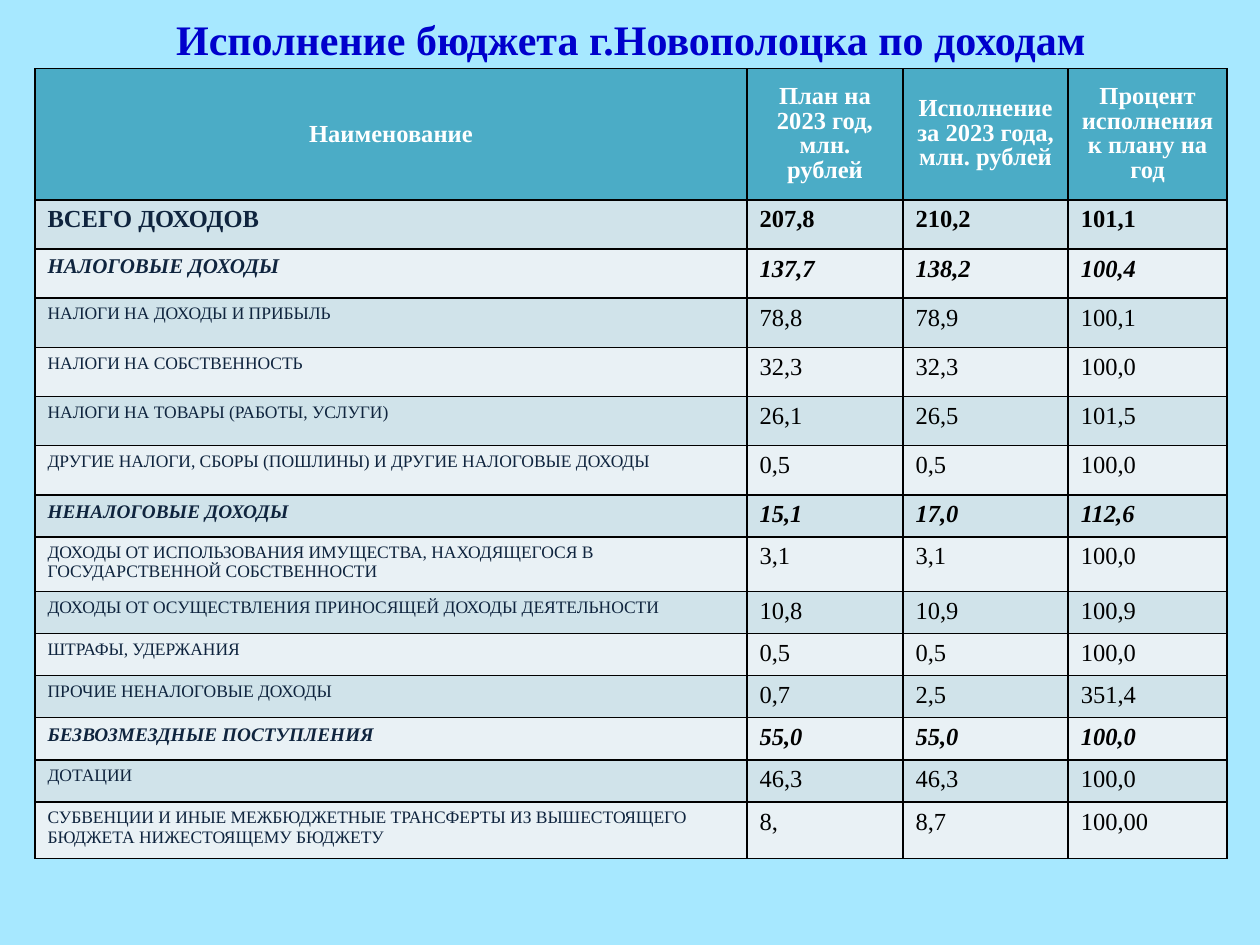
from lxml import etree
from pptx import Presentation
from pptx.dml.color import RGBColor
from pptx.enum import text
from pptx.oxml import ns
from pptx.util import Pt

FONT = "Times New Roman"
TITLE = "Исполнение бюджета г.Новополоцка по доходам"
HEADERS = [
    "Наименование",
    "План на 2023 год, млн. рублей",
    "Исполнение за 2023 года, млн. рублей",
    "Процент исполнения к плану на год",
]
STYLES = {
    "total": (14, True, False),
    "tax": (12, True, True),
    "group": (11, True, True),
    "item": (10, False, False),
}
ROWS = [
    ("total", 28.1, "ВСЕГО ДОХОДОВ", "207,8", "210,2", "101,1"),
    ("tax", 28.1, "НАЛОГОВЫЕ ДОХОДЫ", "137,7", "138,2", "100,4"),
    ("item", 28.1, "НАЛОГИ НА ДОХОДЫ И ПРИБЫЛЬ", "78,8", "78,9", "100,1"),
    ("item", 28.1, "НАЛОГИ НА СОБСТВЕННОСТЬ", "32,3", "32,3", "100,0"),
    ("item", 28.1, "НАЛОГИ НА ТОВАРЫ (РАБОТЫ, УСЛУГИ)", "26,1", "26,5", "101,5"),
    ("item", 28.1, "ДРУГИЕ НАЛОГИ, СБОРЫ (ПОШЛИНЫ) И ДРУГИЕ НАЛОГОВЫЕ ДОХОДЫ",
     "0,5", "0,5", "100,0"),
    ("group", 23.3, "НЕНАЛОГОВЫЕ ДОХОДЫ", "15,1", "17,0", "112,6"),
    ("item", 30.3, "ДОХОДЫ ОТ ИСПОЛЬЗОВАНИЯ ИМУЩЕСТВА, НАХОДЯЩЕГОСЯ В ГОСУДАРСТВЕННОЙ СОБСТВЕННОСТИ",
     "3,1", "3,1", "100,0"),
    ("item", 23.3, "ДОХОДЫ ОТ ОСУЩЕСТВЛЕНИЯ ПРИНОСЯЩЕЙ ДОХОДЫ ДЕЯТЕЛЬНОСТИ",
     "10,8", "10,9", "100,9"),
    ("item", 23.3, "ШТРАФЫ, УДЕРЖАНИЯ", "0,5", "0,5", "100,0"),
    ("item", 23.3, "ПРОЧИЕ НЕНАЛОГОВЫЕ ДОХОДЫ", "0,7", "2,5", "351,4"),
    ("group", 23.3, "БЕЗВОЗМЕЗДНЫЕ ПОСТУПЛЕНИЯ", "55,0", "55,0", "100,0"),
    ("item", 23.3, "ДОТАЦИИ", "46,3", "46,3", "100,0"),
    ("item", 32.3, "СУБВЕНЦИИ И ИНЫЕ МЕЖБЮДЖЕТНЫЕ ТРАНСФЕРТЫ ИЗ ВЫШЕСТОЯЩЕГО БЮДЖЕТА НИЖЕСТОЯЩЕМУ БЮДЖЕТУ",
     "8,", "8,7", "100,00"),
]
COL_WIDTHS = [406.8, 89.2, 94.4, 90.8]
HEADER_HEIGHT = 74.9
BANDS = ["D0E3EA", "E9F1F5"]


def rgb(value):
    return RGBColor.from_string(value)


def write(tf, words, size, color, bold=True, italic=False, centred=False, spacing=None):
    p = tf.paragraphs[0]
    p.text = words
    f = p.font
    f.name, f.size, f.bold, f.italic = FONT, Pt(size), bold, italic
    f.color.rgb = rgb(color)
    if centred:
        p.alignment = text.PP_ALIGN.CENTER
        tf.vertical_anchor = text.MSO_ANCHOR.MIDDLE
    if spacing:
        p.line_spacing = Pt(spacing)


def paint(cell, color):
    cell.fill.solid()
    cell.fill.fore_color.rgb = rgb(color)
    props = cell._tc.get_or_add_tcPr()
    for i, side in enumerate(("lnL", "lnR", "lnT", "lnB")):
        ln = etree.Element(ns.qn(f"a:{side}"), w=str(Pt(1)))
        fill = etree.SubElement(ln, ns.qn("a:solidFill"))
        etree.SubElement(fill, ns.qn("a:srgbClr"), val="000000")
        props.insert(i, ln)


prs = Presentation()
prs.slide_width, prs.slide_height = Pt(720), Pt(540)
s = prs.slides.add_slide(prs.slide_layouts[6])
s.background.fill.solid()
s.background.fill.fore_color.rgb = rgb("A7E8FF")

title = s.shapes.add_textbox(Pt(36.5), Pt(3), Pt(648), Pt(23))
title.text_frame.word_wrap = True
write(title.text_frame, TITLE, 24, "0000CC", centred=True, spacing=44)

heights = [HEADER_HEIGHT] + [row[1] for row in ROWS]
table = s.shapes.add_table(len(heights), len(COL_WIDTHS), Pt(20), Pt(39.3),
                           Pt(sum(COL_WIDTHS)), Pt(sum(heights))).table
for column, width in zip(table.columns, COL_WIDTHS):
    column.width = Pt(width)
for row, height in zip(table.rows, heights):
    row.height = Pt(height)

for c, words in enumerate(HEADERS):
    cell = table.cell(0, c)
    paint(cell, "4BACC6")
    write(cell.text_frame, words, 14, "FFFFFF", centred=True, spacing=14 if c else None)
    cell.vertical_anchor = text.MSO_ANCHOR.MIDDLE

for r, (style, _, *values) in enumerate(ROWS, 1):
    size, bold, italic = STYLES[style]
    for c, words in enumerate(values):
        cell = table.cell(r, c)
        paint(cell, BANDS[(r - 1) % 2])
        write(cell.text_frame, words, 14 if c else size,
              "000000" if c else "0F243E", bold, italic)

prs.save("out.pptx")
